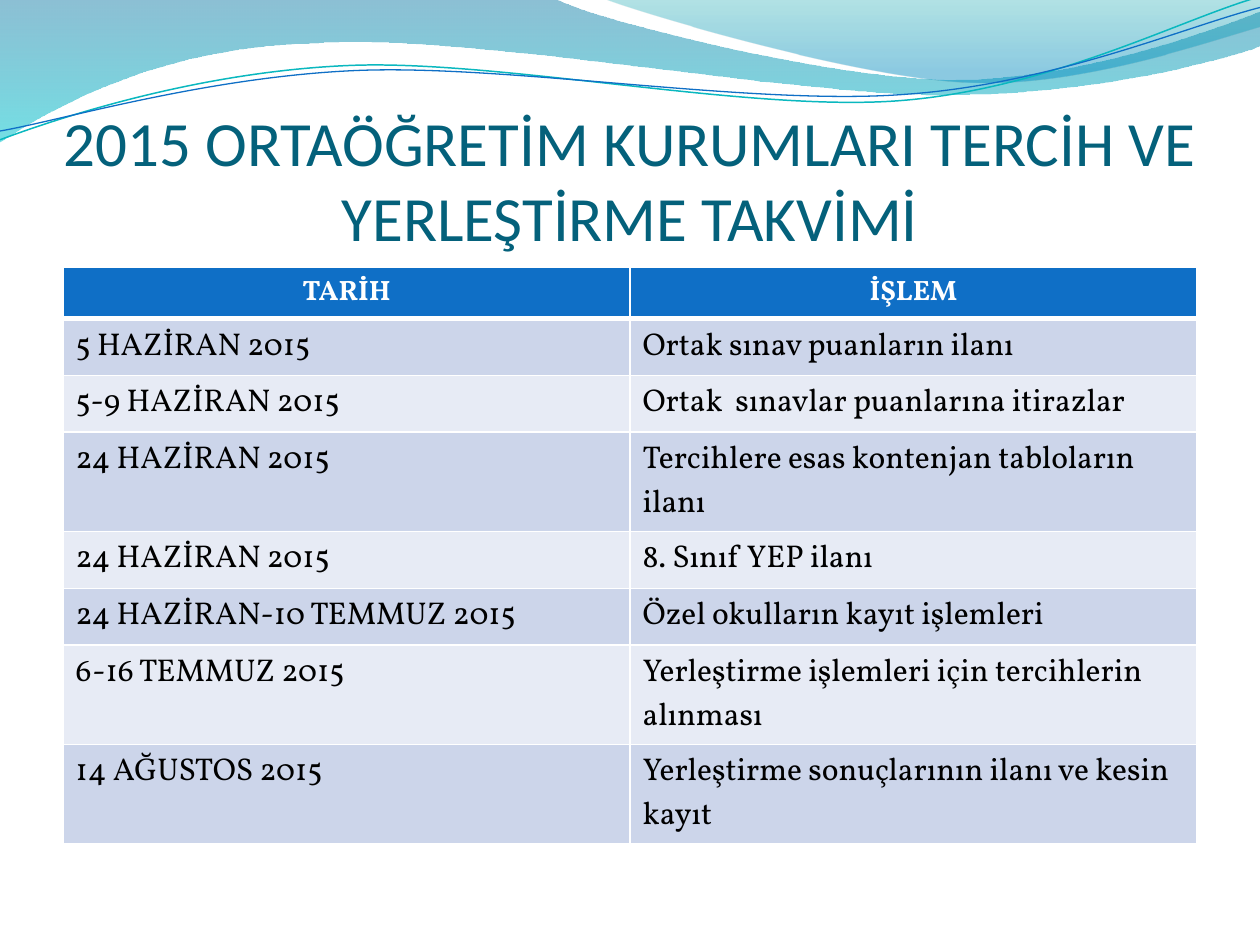
import dataclasses
import math

import lxml.etree
import pptx
import pptx.dml.color
import pptx.enum.text
import pptx.oxml
import pptx.oxml.ns
import pptx.util

Inches = pptx.util.Inches
Pt = pptx.util.Pt
RGB = pptx.dml.color.RGBColor.from_string
qn = pptx.oxml.ns.qn
ALIGN = pptx.enum.text.PP_ALIGN
ANCHOR = pptx.enum.text.MSO_ANCHOR


@dataclasses.dataclass(frozen=True)
class Theme:
    title: str = "04617B"
    header: str = "0F6FC6"
    teal: str = "0AB8BF"
    white: str = "FFFFFF"
    ink: str = "000000"
    bands: tuple = ("CCD5EA", "E7EBF5")
    wave: tuple = ((0, "0074A1", 45), (1, "00C6CF", 55))
    crest: tuple = ((0, "00A1A9", 30), (0.8, "008BBF", 45))
    title_font: str = "Calibri"
    body_font: str = "Vollkorn"
    title_size: int = 36
    header_size: int = 16
    body_size: int = 18


WAVE = [
    (0, 0), (4.4, -0.01),
    (4.76, 0.17, 6.64, 0.63, 7.58, 0.63),
    (8.53, 0.63, 9.58, 0.26, 10, 0.09),
    (10.01, 0.36),
    (9.83, 0.44, 8.7, 0.76, 7.46, 0.75),
    (6.22, 0.75, 3.82, 0.28, 2.57, 0.34),
    (1.29, 0.36, 0.46, 0.83, -0.01, 1.13),
]
CREST = [
    (4.79, -0.01),
    (5.09, 0.11, 6.82, 0.62, 7.69, 0.65),
    (8.56, 0.69, 9.61, 0.32, 10, 0.21),
    (10, 0),
]
TEAL_LINE = [
    (0, 1.11),
    (0.48, 0.93, 1.58, 0.57, 2.77, 0.52),
    (3.95, 0.47, 5.93, 0.89, 7.13, 0.8),
    (8.33, 0.71, 9.38, 0.15, 9.98, -0.02),
]
BLUE_LINE = [
    (0, 1.04),
    (0.47, 0.96, 1.64, 0.61, 2.83, 0.56),
    (4.03, 0.51, 5.97, 0.84, 7.17, 0.75),
    (8.36, 0.67, 9.41, 0.21, 10, 0.06),
]
TILT = -2.7
TITLE = "2015 ORTAÖĞRETİM KURUMLARI TERCİH VE YERLEŞTİRME TAKVİMİ"
CALENDAR = [
    ("TARİH", "İŞLEM"),
    ("5 HAZİRAN 2015", "Ortak sınav puanların ilanı"),
    ("5-9 HAZİRAN 2015", "Ortak  sınavlar puanlarına itirazlar"),
    ("24 HAZİRAN 2015", "Tercihlere esas kontenjan tabloların ilanı"),
    ("24 HAZİRAN 2015", "8. Sınıf YEP ilanı"),
    ("24 HAZİRAN-10 TEMMUZ 2015", "Özel okulların kayıt işlemleri"),
    ("6-16 TEMMUZ 2015", "Yerleştirme işlemleri için tercihlerin alınması"),
    ("14 AĞUSTOS 2015", "Yerleştirme sonuçlarının ilanı ve kesin kayıt"),
]
HEADER_H, LINE_H, TWO_LINE_H = 0.41, 0.45, 0.79
LINE_CHARS = 38


def turn(x, y, degrees):
    a = math.radians(degrees)
    return x * math.cos(a) - y * math.sin(a), x * math.sin(a) + y * math.cos(a)


def row_height(index, row):
    if index == 0:
        return HEADER_H
    return TWO_LINE_H if max(map(len, row)) > LINE_CHARS else LINE_H


def write_text(tf, text, *, font, size, color, bold=False, align=ALIGN.LEFT):
    p = tf.paragraphs[0]
    p.alignment = align
    r = p.add_run()
    r.text = text
    r.font.name = font
    r.font.size = Pt(size)
    r.font.bold = bold
    r.font.color.rgb = RGB(color)


class Deck:
    def __init__(self, slide, theme):
        self.s = slide
        self.theme = theme

    def freeform(self, path, close, tilt=0):
        points = [turn(*seg[i:i + 2], -tilt) for seg in path for i in range(0, len(seg), 2)]
        points = [(Inches(x), Inches(y)) for x, y in points]
        builder = self.s.shapes.build_freeform(*points[0], scale=1.0)
        builder.add_line_segments(points[1:], close=close)
        sp = builder.convert_to_shape()
        sp.shadow.inherit = False
        lines = iter(list(sp._element.iter(qn("a:lnTo"))))
        for seg in path[1:]:
            first = next(lines)
            if len(seg) == 6:
                first.tag = qn("a:cubicBezTo")
                for line in (next(lines), next(lines)):
                    first.append(line[0])
                    line.getparent().remove(line)
        cx, cy = sp.left + sp.width / 2, sp.top + sp.height / 2
        x, y = turn(cx, cy, tilt)
        sp.left, sp.top = round(x - sp.width / 2), round(y - sp.height / 2)
        sp.rotation = tilt
        return sp

    def wave(self, path, stops):
        sp = self.freeform(path, True)
        sp.line.fill.background()
        sp.fill.gradient()
        sp.fill.gradient_angle = 270
        for stop, (position, color, _) in zip(sp.fill.gradient_stops, stops):
            stop.position = position
            stop.color.rgb = RGB(color)
        for clr, (_, _, alpha) in zip(sp._element.spPr.iter(qn("a:srgbClr")), stops):
            lxml.etree.SubElement(clr, qn("a:alpha"), val=str(alpha * 1000))

    def curve(self, path, color, width):
        sp = self.freeform(path, False, TILT)
        sp.fill.background()
        sp.line.color.rgb = RGB(color)
        sp.line.width = Pt(width)

    def title(self, text, x, y, w, h):
        tf = self.s.shapes.add_textbox(Inches(x), Inches(y), Inches(w), Inches(h)).text_frame
        tf.word_wrap = True
        tf.vertical_anchor = ANCHOR.BOTTOM
        tf.margin_left = tf.margin_right = tf.margin_bottom = 0
        tf.margin_top = Inches(0.05)
        write_text(tf, text, font=self.theme.title_font, size=self.theme.title_size,
                   color=self.theme.title, align=ALIGN.CENTER)

    def borders(self, cell, top, bottom):
        tcPr = cell._tc.get_or_add_tcPr()
        for i, (side, width) in enumerate((("L", 1), ("R", 1), ("T", top), ("B", bottom))):
            ln = lxml.etree.Element(qn(f"a:ln{side}"), w=str(Pt(width)))
            fill = lxml.etree.SubElement(ln, qn("a:solidFill"))
            lxml.etree.SubElement(fill, qn("a:srgbClr"), val=self.theme.white)
            tcPr.insert(i, ln)

    def table(self, rows, x, y, w):
        th = self.theme
        heights = [row_height(i, row) for i, row in enumerate(rows)]
        tbl = self.s.shapes.add_table(len(rows), len(rows[0]), Inches(x), Inches(y),
                                      Inches(w), Inches(sum(heights))).table
        for i, row in enumerate(rows):
            tbl.rows[i].height = Inches(heights[i])
            head = i == 0
            for j, text in enumerate(row):
                cell = tbl.cell(i, j)
                cell.margin_top = cell.margin_bottom = Inches(0.05)
                cell.fill.solid()
                cell.fill.fore_color.rgb = RGB(th.header if head else th.bands[(i - 1) % 2])
                self.borders(cell, 3 if i == 1 else 1, 3 if head else 1)
                write_text(cell.text_frame, text, font=th.body_font, bold=head,
                           size=th.header_size if head else th.body_size,
                           color=th.white if head else th.ink,
                           align=ALIGN.CENTER if head else ALIGN.LEFT)


def main():
    prs = pptx.Presentation()
    prs.slide_width, prs.slide_height = Inches(10), Inches(7.5)
    theme = Theme()
    deck = Deck(prs.slides.add_slide(prs.slide_layouts[6]), theme)
    deck.wave(WAVE, theme.wave)
    deck.wave(CREST, theme.crest)
    deck.curve(TEAL_LINE, theme.teal, 0.85)
    deck.curve(BLUE_LINE, theme.header, 0.75)
    deck.title(TITLE, 0.5, 0.77, 9, 1.25)
    deck.table(CALENDAR, 0.5, 2.12, 9)
    prs.save("out.pptx")


if __name__ == "__main__":
    main()
